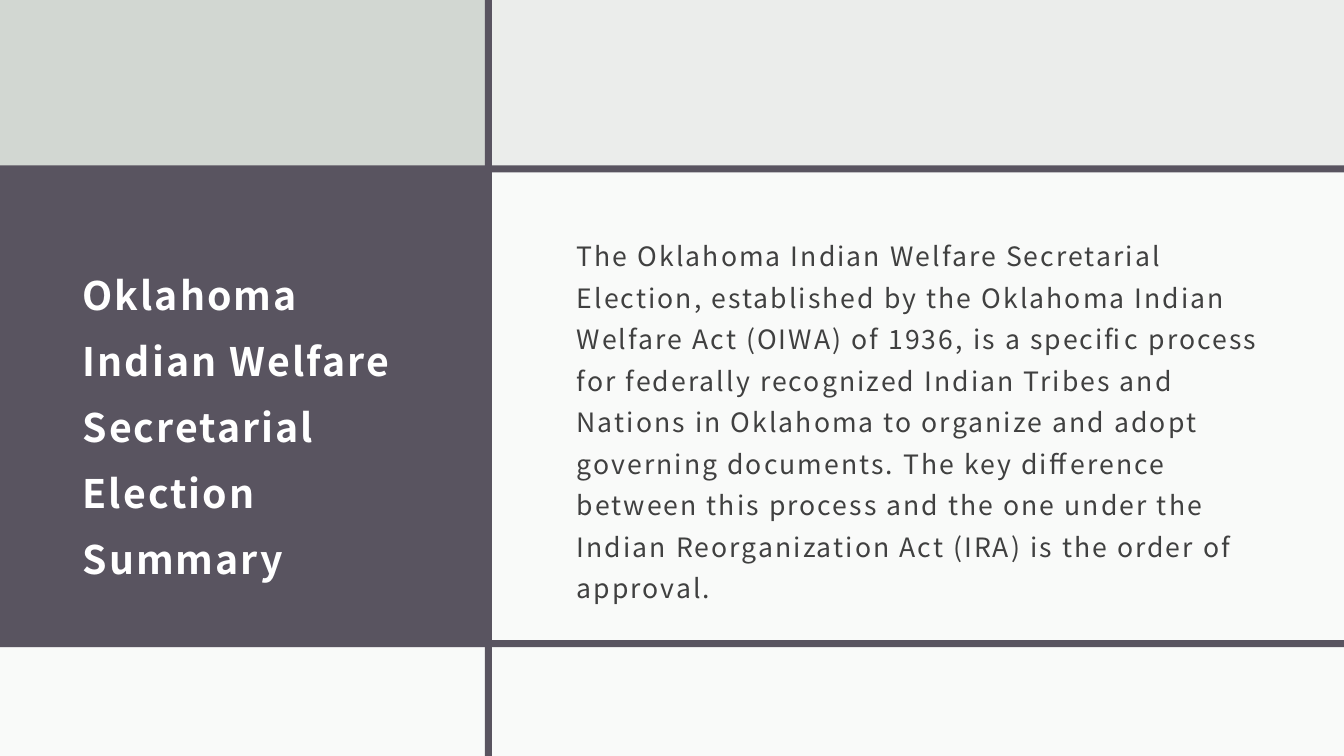
from lxml.etree import SubElement
from pptx import Presentation
from pptx.dml.color import RGBColor
from pptx.enum.shapes import MSO_SHAPE as Shape
from pptx.enum.text import MSO_ANCHOR as Anchor, MSO_AUTO_SIZE as AutoSize, PP_ALIGN as Align
from pptx.oxml.ns import qn
from pptx.util import Inches, Pt

PLUM = RGBColor(0x59, 0x54, 0x60)
SAGE = RGBColor(0xD2, 0xD7, 0xD2)
MIST = RGBColor(0xEB, 0xED, 0xEB)
WHITE = RGBColor(0xFF, 0xFF, 0xFF)
CHARCOAL = RGBColor(0x40, 0x40, 0x40)

FONT = "Noto Sans CJK JP"
SLIDE_W, SLIDE_H = 13.33, 7.5
BAR = 0.07
TITLE = "Oklahoma Indian Welfare Secretarial Election Summary"
SUMMARY = (
    "The Oklahoma Indian Welfare Secretarial Election, established by the "
    "Oklahoma Indian Welfare Act (OIWA) of 1936, is a specific process for "
    "federally recognized Indian Tribes and Nations in Oklahoma to organize "
    "and adopt governing documents. The key difference between this process "
    "and the one under the Indian Reorganization Act (IRA) is the order of "
    "approval."
)


def add_panel(slide, left, top, width, height, color, opacity=100):
    panel = slide.shapes.add_shape(
        Shape.RECTANGLE, Inches(left), Inches(top), Inches(width), Inches(height))
    panel.shadow.inherit = False
    panel.line.fill.background()
    panel.fill.solid()
    panel.fill.fore_color.rgb = color
    if opacity < 100:
        srgb = panel.fill._xPr.find(qn("a:solidFill"))[0]
        SubElement(srgb, qn("a:alpha")).set("val", str(opacity * 1000))


def fill_placeholder(slide, holder, left, width, text, size, color,
                     line_spacing, bold=False):
    """Place a placeholder above the panels and set its letter-spaced text."""
    holder.left, holder.top = Inches(left), Inches(2.14)
    holder.width, holder.height = Inches(width), Inches(3.98)
    slide.shapes._spTree.append(holder._element)

    frame = holder.text_frame
    frame.word_wrap = True
    frame.auto_size = AutoSize.NONE
    frame.vertical_anchor = Anchor.MIDDLE
    frame.margin_left = frame.margin_right = frame.margin_top = Inches(0.12)
    frame.margin_bottom = Inches(0.1)

    paragraph = frame.paragraphs[0]
    properties = paragraph._p.get_or_add_pPr()
    properties.set("marL", "0")
    properties.set("indent", "0")
    SubElement(properties, qn("a:buNone"))
    paragraph.alignment = Align.LEFT
    paragraph.line_spacing = line_spacing
    paragraph.space_before = Pt(0)

    run = paragraph.add_run()
    run.text = text
    run.font.name = FONT
    run.font.size = Pt(size)
    run.font.bold = bold
    run.font.color.rgb = color
    run_properties = run._r.get_or_add_rPr()
    run_properties.set("spc", "150")
    SubElement(run_properties, qn("a:ea")).set("typeface", FONT)


def main():
    prs = Presentation()
    prs.slide_width, prs.slide_height = Inches(SLIDE_W), Inches(SLIDE_H)
    slide = prs.slides.add_slide(prs.slide_layouts[1])
    slide.background.fill.solid()
    slide.background.fill.fore_color.rgb = MIST

    add_panel(slide, 0, 1.64, 4.84, 4.78, PLUM)
    add_panel(slide, 0, 0, 4.84, 1.66, SAGE)
    add_panel(slide, 4.84, 1.66, 8.49, 4.76, WHITE, opacity=75)
    add_panel(slide, 0, 6.41, SLIDE_W, 1.09, WHITE, opacity=75)
    for bar_top in (1.64, 6.35):
        add_panel(slide, 0, bar_top, SLIDE_W, BAR, PLUM)
    add_panel(slide, 4.81, 0, BAR, SLIDE_H, PLUM)

    title, body = slide.placeholders
    fill_placeholder(slide, title, 0.7, 3.73, TITLE, 28, WHITE, 1.4, bold=True)
    fill_placeholder(slide, body, 5.6, 7.03, SUMMARY, 19, CHARCOAL, 1.3)
    prs.save("out.pptx")


if __name__ == "__main__":
    main()
